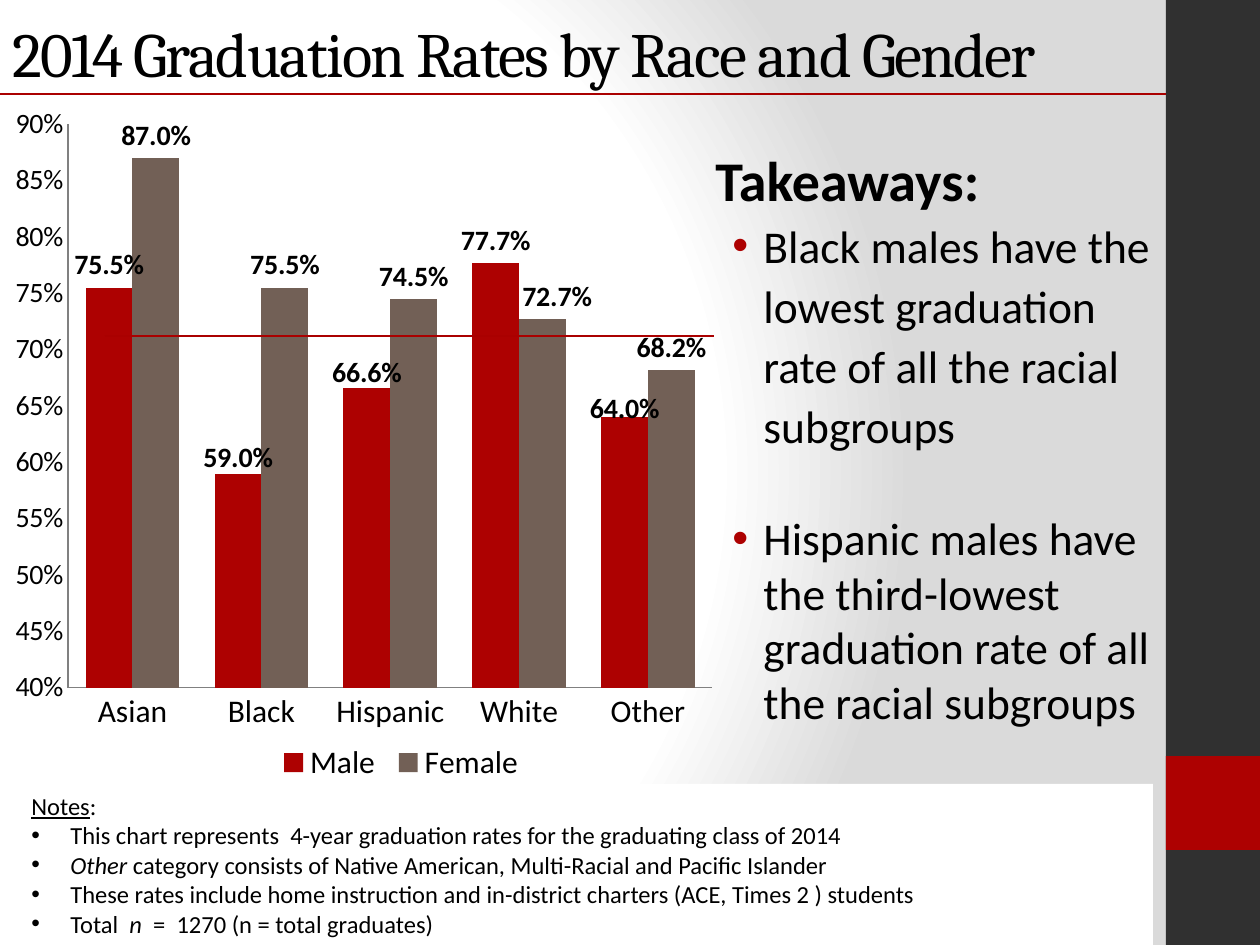
from dataclasses import dataclass

from lxml import etree
from pptx import Presentation
from pptx.chart.data import CategoryChartData
from pptx.dml.color import RGBColor
from pptx.enum.chart import XL_CHART_TYPE, XL_LABEL_POSITION, XL_LEGEND_POSITION, XL_TICK_MARK
from pptx.enum.shapes import MSO_CONNECTOR, MSO_SHAPE
from pptx.enum.text import MSO_ANCHOR, PP_ALIGN
from pptx.oxml import parse_xml
from pptx.oxml.ns import nsdecls, qn
from pptx.util import Emu, Pt

RECTANGLE = MSO_SHAPE.RECTANGLE
STRAIGHT = MSO_CONNECTOR.STRAIGHT
COLUMNS = XL_CHART_TYPE.COLUMN_CLUSTERED
OUTSIDE_END = XL_LABEL_POSITION.OUTSIDE_END
BOTTOM = XL_LEGEND_POSITION.BOTTOM
NO_TICK = XL_TICK_MARK.NONE
TOP, MIDDLE = MSO_ANCHOR.TOP, MSO_ANCHOR.MIDDLE
LEFT = PP_ALIGN.LEFT

PX_PER_INCH = 126
BLACK, WHITE, CHARCOAL = "000000", "FFFFFF", "303030"
RED, LINE_RED, BROWN, AXIS_GRAY = "AD0101", "AA0000", "726056", "808080"
BODY_FONT = "Calibri"


@dataclass(frozen=True)
class Box:
    left: int
    top: int
    width: int
    height: int


@dataclass(frozen=True)
class Run:
    text: str
    bold: bool = False
    italic: bool = False
    underline: bool = False


@dataclass(frozen=True)
class Line:
    runs: tuple[Run, ...]
    size: int
    indent: int = 0
    hanging: int = 0
    bullet_color: str = ""
    spacing: float = 1.0
    before: int = 0


@dataclass(frozen=True)
class Series:
    name: str
    values: tuple[float, ...]
    color: str
    label_shifts: dict[int, tuple[float, float]]


def px(length: int) -> Emu:
    return Emu(round(length * 914400 / PX_PER_INCH))


def color(value: str) -> RGBColor:
    return RGBColor.from_string(value)


def place(box: Box) -> tuple[Emu, ...]:
    return px(box.left), px(box.top), px(box.width), px(box.height)


def format_font(font, size: int, name: str = BODY_FONT, bold: bool = False) -> None:
    font.name, font.size, font.bold = name, Pt(size), bold
    font.color.rgb = color(BLACK)


def add_rectangle(slide, box: Box, fill: str):
    shape = slide.shapes.add_shape(RECTANGLE, *place(box))
    shape.shadow.inherit = False
    shape.fill.solid()
    shape.fill.fore_color.rgb = color(fill)
    shape.line.fill.background()
    return shape


def add_rule(slide, start: int, end: int, y: int) -> None:
    connector = slide.shapes.add_connector(STRAIGHT, px(start), px(y), px(end), px(y))
    connector.line.color.rgb = color(LINE_RED)
    connector.line.width = Pt(1)
    etree.SubElement(connector.element.spPr, qn("a:effectLst"))


def add_bullet(paragraph, line: Line) -> None:
    properties = paragraph._p.get_or_add_pPr()
    properties.set("marL", str(px(line.indent)))
    properties.set("indent", str(-px(line.hanging)))
    bullet_color = etree.SubElement(properties, qn("a:buClr"))
    etree.SubElement(bullet_color, qn("a:srgbClr"), val=line.bullet_color)
    etree.SubElement(properties, qn("a:buFont"), typeface="Arial")
    etree.SubElement(properties, qn("a:buChar"), char="•")


def write_text(shape, lines: list[Line], *, font: str = BODY_FONT,
               anchor=TOP, character_spacing: int = 0) -> None:
    frame = shape.text_frame
    frame.word_wrap = True
    frame.vertical_anchor = anchor
    for index, line in enumerate(lines):
        paragraph = frame.add_paragraph() if index else frame.paragraphs[0]
        paragraph.alignment = LEFT
        paragraph.line_spacing = line.spacing
        paragraph.space_before = Pt(line.before)
        if line.bullet_color:
            add_bullet(paragraph, line)
        for part in line.runs:
            run = paragraph.add_run()
            run.text = part.text
            format_font(run.font, line.size, font, part.bold)
            run.font.italic, run.font.underline = part.italic, part.underline
            if character_spacing:
                run.font._element.set("spc", str(character_spacing))


def paint_background(slide) -> None:
    slide.background.fill.solid()
    properties = slide.element.xpath(".//p:bgPr")[0]
    stops = "".join(f'<a:gs pos="{position}000"><a:srgbClr val="{value}"/></a:gs>'
                    for position, value in ((0, WHITE), (75, WHITE), (100, "DADADA")))
    properties.replace(properties[0], parse_xml(
        f'<a:gradFill {nsdecls("a")} rotWithShape="1"><a:gsLst>{stops}</a:gsLst>'
        '<a:path path="circle"><a:fillToRect l="20000" t="50000" r="100000" b="50000"/>'
        '</a:path></a:gradFill>'))


def manual_layout(target: str = "", **lengths: float):
    inner = f'<c:layoutTarget val="{target}"/>' if target else ""
    modes = '<c:xMode val="edge"/><c:yMode val="edge"/>' if "w" in lengths else ""
    values = "".join(f'<c:{key} val="{value}"/>' for key, value in lengths.items())
    return parse_xml(f'<c:layout {nsdecls("c")}><c:manualLayout>{inner}{modes}{values}'
                     '</c:manualLayout></c:layout>')


def set_layout(parent, layout, position: int) -> None:
    for existing in parent.findall(qn("c:layout")):
        parent.remove(existing)
    parent.insert(position, layout)


def format_series(series, source: Series) -> None:
    series.format.fill.solid()
    series.format.fill.fore_color.rgb = color(source.color)
    series.invert_if_negative = False
    labels = series.data_labels
    labels.show_value = True
    labels.number_format, labels.number_format_is_linked = "0.0%", False
    labels.position = OUTSIDE_END
    format_font(labels.font, 16, bold=True)
    for index, (x, y) in source.label_shifts.items():
        label = series.points[index].data_label
        format_font(label.font, 16, bold=True)
        label.position = OUTSIDE_END
        element = series._element.xpath(f'.//c:dLbl[c:idx/@val="{index}"]')[0]
        set_layout(element, manual_layout(x=x, y=y), 1)
        element.insert(2, parse_xml(
            f'<c:numFmt {nsdecls("c")} formatCode="0.0%" sourceLinked="0"/>'))


def add_rate_chart(slide, box: Box, categories: list[str], sources: list[Series]) -> None:
    data = CategoryChartData(number_format="0.0%")
    data.categories = categories
    for source in sources:
        data.add_series(source.name, source.values)
    chart = slide.shapes.add_chart(COLUMNS, *place(box), data).chart
    chart.has_title = False
    format_font(chart.font, 18)
    chart.has_legend = True
    chart.legend.position, chart.legend.include_in_layout = BOTTOM, False
    format_font(chart.legend.font, 18)
    plot = chart.plots[0]
    plot.gap_width, plot.overlap, plot.vary_by_categories = 75, 0, False
    for series, source in zip(plot.series, sources):
        format_series(series, source)
    for axis, size in ((chart.category_axis, 18), (chart.value_axis, 16)):
        axis.has_major_gridlines = False
        axis.major_tick_mark = axis.minor_tick_mark = NO_TICK
        axis.format.line.color.rgb = color(AXIS_GRAY)
        format_font(axis.tick_labels.font, size)
    axis = chart.value_axis
    axis.minimum_scale, axis.maximum_scale, axis.major_unit = 0.4, 0.9, 0.05
    axis.tick_labels.number_format, axis.tick_labels.number_format_is_linked = "0%", False
    plot_area = chart.element.xpath(".//c:plotArea")[0]
    set_layout(plot_area, manual_layout("inner", x=0.09, y=0.04, w=0.89, h=0.79), 0)
    legend = chart.element.xpath(".//c:legend")[0]
    set_layout(legend, manual_layout(x=0.37, y=0.9, w=0.36, h=0.07), 1)


def note(*runs: Run) -> Line:
    return Line(runs, 14, indent=39, hanging=39, bullet_color=BLACK)


def main() -> None:
    presentation = Presentation()
    presentation.slide_width, presentation.slide_height = px(1260), px(945)
    slide = presentation.slides.add_slide(presentation.slide_layouts[6])
    paint_background(slide)
    add_rectangle(slide, Box(1166, 0, 94, 945), CHARCOAL)
    add_rectangle(slide, Box(1166, 756, 94, 94), RED)
    title = slide.shapes.add_textbox(*place(Box(0, 10, 1239, 84)))
    write_text(title, [Line((Run("2014 Graduation Rates by Race and Gender"),), 36)],
               font="Cambria", anchor=MIDDLE, character_spacing=-100)
    add_rate_chart(slide, Box(3, 96, 724, 713), ["Asian", "Black", "Hispanic", "White", "Other"], [
        Series("Male", (0.755, 0.59, 0.666, 0.777, 0.64), RED,
               {1: (0, 0.01), 2: (0, 0.01), 4: (0, 0.02)}),
        Series("Female", (0.87, 0.755, 0.745, 0.727, 0.682), BROWN, {3: (0.02, 0), 4: (0, 0)}),
    ])
    takeaways = slide.shapes.add_textbox(*place(Box(703, 139, 472, 711)))
    write_text(takeaways, [
        Line((Run("Takeaways:", bold=True),), 32),
        Line((Run("Black males have the lowest graduation rate of all the racial subgroups"),),
             26, 48, 31, RED, spacing=1.1),
        Line((Run("Hispanic males have the third-lowest graduation rate of all the racial subgroups"),),
             26, 48, 31, RED, before=33),
    ])
    notes = add_rectangle(slide, Box(19, 784, 1134, 161), WHITE)
    write_text(notes, [
        Line((Run("Notes", underline=True), Run(":")), 14),
        note(Run("This chart represents  4-year graduation rates for the graduating class of 2014")),
        note(Run("Other", italic=True),
             Run(" category consists of Native American, Multi-Racial and Pacific Islander")),
        note(Run("These rates include home instruction and in-district charters (ACE, Times 2 ) students")),
        note(Run("Total "), Run(" n ", italic=True), Run(" =  1270 (n = total graduates)")),
    ], anchor=MIDDLE)
    add_rule(slide, 0, 1166, 94)
    add_rule(slide, 105, 714, 336)
    presentation.save("out.pptx")


if __name__ == "__main__":
    main()
